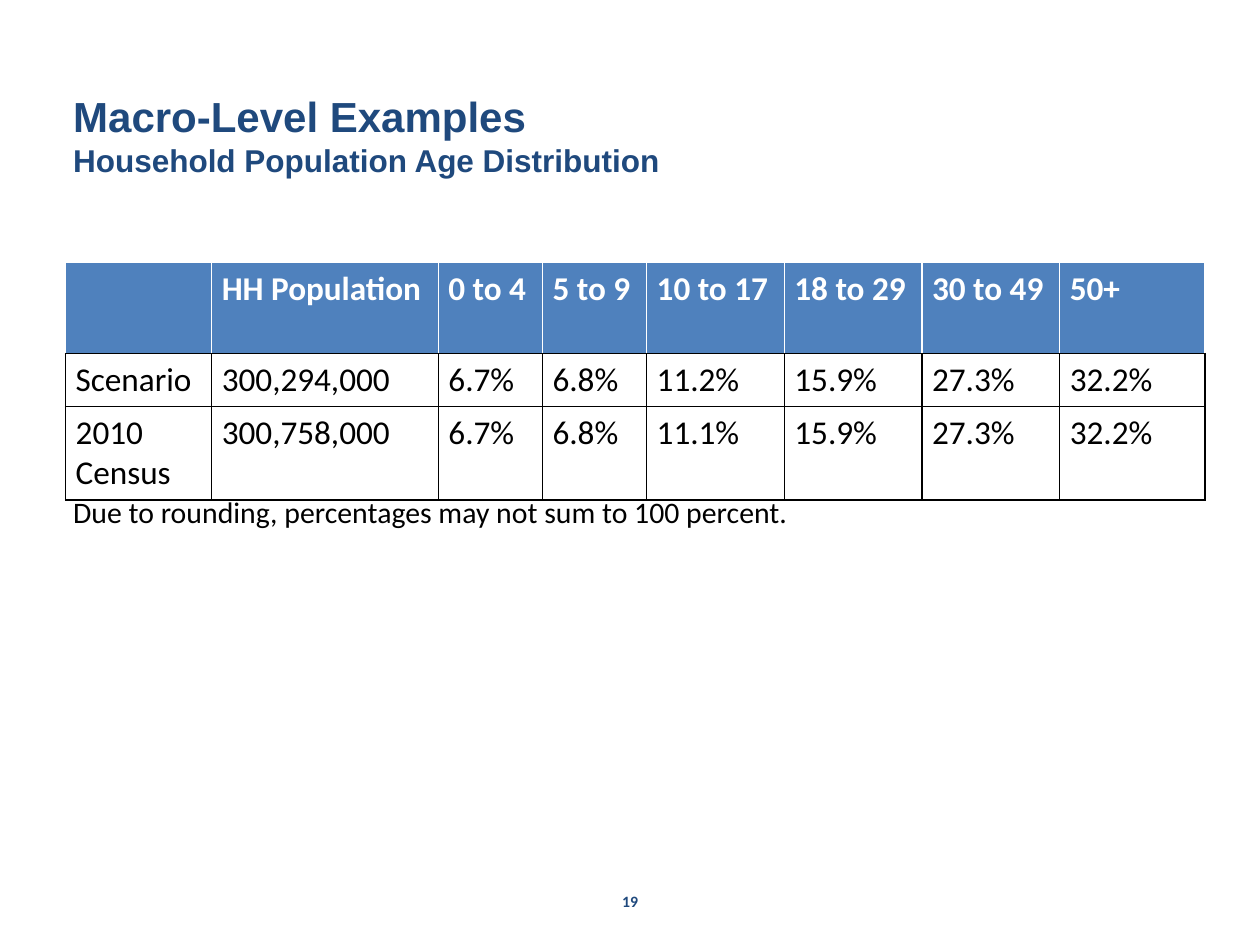
from pptx import Presentation
from pptx.dml.color import RGBColor as Rgb
from pptx.enum.text import MSO_ANCHOR as Anchor, MSO_AUTO_SIZE as Fit, PP_ALIGN as Align
from pptx.oxml.ns import qn
from pptx.util import Pt
from lxml.etree import SubElement as Sub

HUES = {"navy": "1F497D", "blue": "4F81BD", "white": "FFFFFF", "black": "000000"}
FORMS = {
    "title": dict(name="Arial", size=Pt(24), bold=True, hue="navy"),
    "sub": dict(name="Arial", size=Pt(18), bold=True, hue="navy"),
    "head": dict(name="Calibri", size=Pt(19), bold=True, hue="white"),
    "cell": dict(name="Calibri", size=Pt(19), bold=False, hue="black"),
    "note": dict(name="Calibri", size=Pt(17), bold=False, hue="black"),
    "page": dict(name="Calibri", size=Pt(9), bold=True, hue="navy"),
}
COLS = [83.5, 129.5, 59.5, 59.5, 78.7, 78.7, 78.7, 83]
ROWS = [52, 30, 53]
DATA = [
    ["", "HH Population", "0 to 4", "5 to 9", "10 to 17", "18 to 29", "30 to 49", "50+"],
    ["Scenario", "300,294,000", "6.7%", "6.8%", "11.2%", "15.9%", "27.3%", "32.2%"],
    ["2010 Census", "300,758,000", "6.7%", "6.8%", "11.1%", "15.9%", "27.3%", "32.2%"],
]


def style(font, form):
    for key, val in FORMS[form].items():
        if key == "hue":
            font.color.rgb = Rgb.from_string(HUES[val])
        else:
            setattr(font, key, val)


def write(para, text, form, align=Align.LEFT):
    para.alignment = align
    para.space_before = Pt(0)
    run = para.add_run()
    run.text = text
    style(run.font, form)


def place(shape, box, anchor=Anchor.TOP, top=3):
    shape.left, shape.top, shape.width, shape.height = map(Pt, box)
    frame = shape.text_frame
    form = dict(word_wrap=True, auto_size=Fit.NONE, vertical_anchor=anchor,
                margin_left=Pt(5.8), margin_right=Pt(5.8),
                margin_top=Pt(top), margin_bottom=Pt(3))
    for key, val in form.items():
        setattr(frame, key, val)
    return frame


def edge(cell, side, hue):
    line = Sub(cell._tc.get_or_add_tcPr(), qn("a:" + side), w=str(Pt(1)))
    fill = Sub(line, qn("a:solidFill"))
    Sub(fill, qn("a:srgbClr"), val=HUES[hue])


def add_title(slide, box):
    frame = place(slide.shapes.title, box, top=4)
    write(frame.paragraphs[0], "Macro-Level Examples", "title")
    write(frame.add_paragraph(), "Household Population Age Distribution", "sub")


def add_note(slide, box):
    frame = place(slide.placeholders[1], box, top=186)
    para = frame.paragraphs[0]
    props = para._p.get_or_add_pPr()
    props.set("marL", "0")
    props.set("indent", "0")
    Sub(props, qn("a:buNone"))
    write(para, "Due to rounding, percentages may not sum to 100 percent.", "note")


def add_grid(slide, box):
    grid = slide.shapes.add_table(len(ROWS), len(COLS), *map(Pt, box)).table
    for col, width in zip(grid.columns, COLS):
        col.width = Pt(width)
    for r, (row, high) in enumerate(zip(DATA, ROWS)):
        grid.rows[r].height = Pt(high)
        form, back, rim = ("cell", "white", "black") if r else ("head", "blue", "white")
        for c, text in enumerate(row):
            cell = grid.cell(r, c)
            cell.margin_left = cell.margin_right = Pt(5.8)
            cell.margin_top = cell.margin_bottom = Pt(3.6)
            for side in ("lnL", "lnR", "lnT", "lnB"):
                shared = side == "lnB" or (side == "lnT" and r)
                edge(cell, side, "black" if shared else rim)
            cell.fill.solid()
            cell.fill.fore_color.rgb = Rgb.from_string(HUES[back])
            para = cell.text_frame.paragraphs[0]
            if text:
                write(para, text, form)
            else:
                style(para.font, form)


def add_page(slide, box):
    frame = place(slide.shapes.add_textbox(*map(Pt, box)), box, Anchor.MIDDLE)
    write(frame.paragraphs[0], "19", "page", Align.CENTER)


def main():
    deck = Presentation()
    deck.slide_width, deck.slide_height = Pt(720), Pt(540)
    slide = deck.slides.add_slide(deck.slide_layouts[1])
    add_title(slide, (36, 48, 648, 90))
    add_note(slide, (36, 96, 654, 354))
    add_grid(slide, (37.5, 150, sum(COLS), sum(ROWS)))
    add_page(slide, (276, 500.5, 168, 28.8))
    deck.save("out.pptx")


if __name__ == "__main__":
    main()
